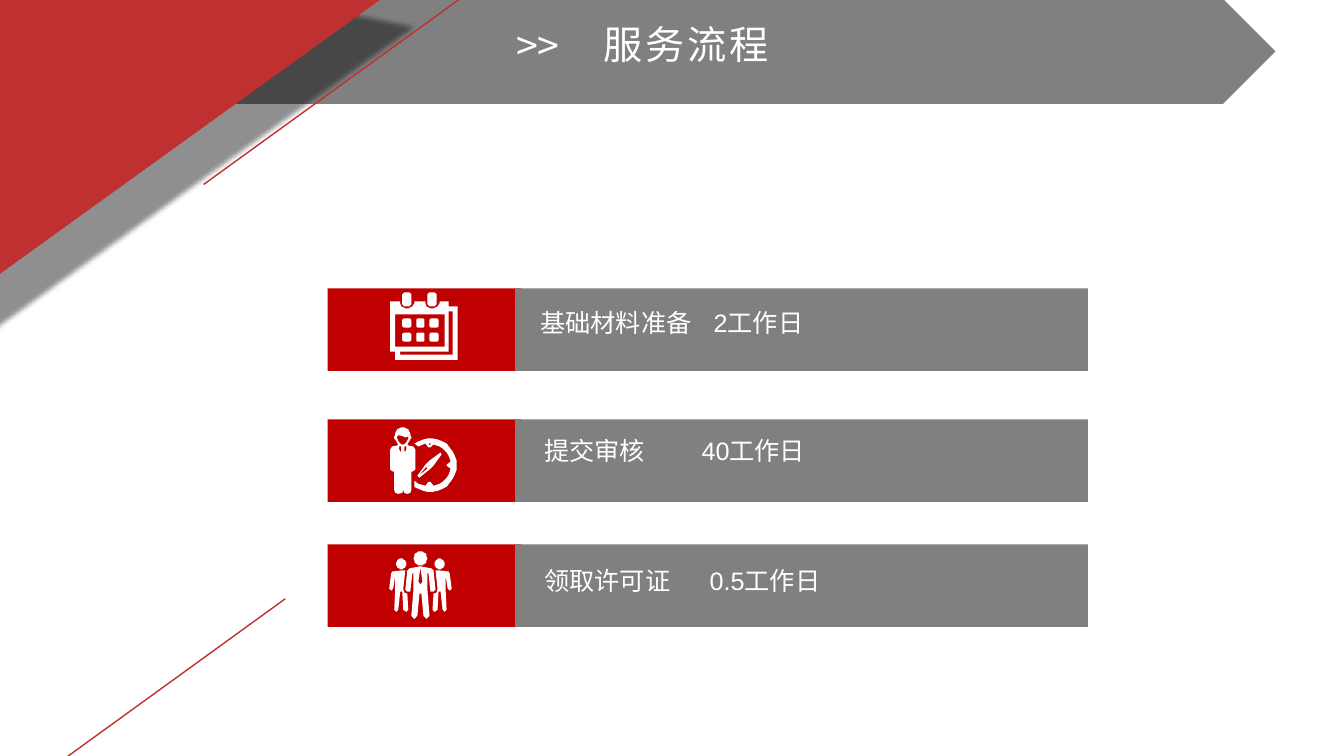
import math

import lxml.etree
import pptx
import pptx.dml.color
import pptx.enum.shapes
import pptx.enum.text
import pptx.oxml
import pptx.oxml.ns
import pptx.util

Inches = pptx.util.Inches
qn = pptx.oxml.ns.qn
SHAPES = pptx.enum.shapes.MSO_SHAPE
CJK_FONT = "Noto Sans CJK SC"
WHITE, GREY, RED, BRICK = "FFFFFF", "808080", "C00000", "BF3030"


def color(value):
    """Return the RGB colour for a hex string."""
    return pptx.dml.color.RGBColor.from_string(value)


def paint(shape, fill):
    """Give a shape a plain fill without outline or shadow."""
    shape.shadow.inherit = False
    shape.fill.solid()
    shape.fill.fore_color.rgb = color(fill)
    shape.line.fill.background()


def add_block(shapes, kind, left, top, width, height, fill):
    """Add a filled preset shape and return it."""
    sp = shapes.add_shape(kind, Inches(left), Inches(top), Inches(width), Inches(height))
    paint(sp, fill)
    return sp


def add_text(shapes, text, left, top, width, height, size, font, spacing=0, tab=0):
    """Add one line of white text, with optional letter spacing and tab stop."""
    sp = shapes.add_textbox(Inches(left), Inches(top), Inches(width), Inches(height))
    tf = sp.text_frame
    tf.word_wrap = True
    tf.auto_size = pptx.enum.text.MSO_AUTO_SIZE.SHAPE_TO_FIT_TEXT
    tf.text = text
    p = tf.paragraphs[0]
    if tab:
        tabs = lxml.etree.SubElement(p._p.get_or_add_pPr(), qn("a:tabLst"))
        lxml.etree.SubElement(tabs, qn("a:tab"), pos=str(Inches(tab)), algn="l")
    for r in p.runs:
        r.font.size = pptx.util.Pt(size)
        r.font.name = font
        r.font.color.rgb = color(WHITE)
        props = r._r.get_or_add_rPr()
        lxml.etree.SubElement(props, qn("a:ea"), typeface=CJK_FONT)
        if spacing:
            props.set("spc", str(spacing * 100))
    return p


def add_line(shapes, x1, y1, x2, y2):
    """Add a thin brick-red accent line."""
    line = shapes.add_connector(pptx.enum.shapes.MSO_CONNECTOR.STRAIGHT,
                                Inches(x1), Inches(y1), Inches(x2), Inches(y2))
    line.line.color.rgb = color(BRICK)
    line.line.width = pptx.util.Pt(1)
    lxml.etree.SubElement(line._element.spPr, qn("a:effectLst"))


def add_corner(shapes):
    """Add the tilted corner triangle with its soft shadow."""
    sp = add_block(shapes, SHAPES.ISOSCELES_TRIANGLE, -2.44, -1.18, 5.87, 3.17, BRICK)
    sp.rotation = 324.2
    effects = sp._element.spPr.find(qn("a:effectLst"))
    shadow = lxml.etree.SubElement(
        effects, qn("a:outerShdw"), blurRad=str(pptx.util.Pt(4)),
        dist=str(pptx.util.Pt(30)), dir="2700000", algn="tl", rotWithShape="0")
    black = lxml.etree.SubElement(shadow, qn("a:srgbClr"), val="000000")
    lxml.etree.SubElement(black, qn("a:alpha"), val="43000")


def arc(cx, cy, rx, ry, start, end, steps=24):
    """Return points along an elliptical arc, angles in degrees."""
    angles = [math.radians(start + (end - start) * i / steps) for i in range(steps + 1)]
    return [(cx + rx * math.cos(a), cy + ry * math.sin(a)) for a in angles]


def rounded(left, top, width, height, radius):
    """Return the outline of a rounded rectangle."""
    right, bottom = left + width - radius, top + height - radius
    corners = [(right, bottom), (left + radius, bottom),
               (left + radius, top + radius), (right, top + radius)]
    return [point for i, (x, y) in enumerate(corners)
            for point in arc(x, y, radius, radius, 90 * i, 90 * i + 90, 4)]


def mirror(points, width):
    """Reflect points from left to right within a width."""
    return [(width - x, y) for x, y in reversed(points)]


def calendar():
    """Return the calendar outlines in hundredths of an inch."""
    body = [(0, 9), (10, 9), (10, 11), (11, 14), (15, 16), (18, 16), (22, 14), (24, 11),
            (24, 9), (35, 9), (35, 11), (36, 14), (40, 16), (43, 16), (47, 14), (49, 11),
            (49, 9), (58, 9), (58, 14), (67, 14), (67, 67), (5, 67), (5, 59), (0, 59)]
    panel = [(5, 22), (54, 22), (54, 54), (5, 54)]
    back = [(58, 19), (58, 59), (10, 59), (10, 62), (62, 62), (62, 19)]
    days = [rounded(x, y, 9, 9, 2) for y in (26, 40) for x in (12, 25.5, 39)]
    rings = [rounded(x, 0, 9, 14, 4) for x in (12, 37)]
    return [body, panel, back] + days + rings


def inspector():
    """Return the outlines of a person beside a compass."""
    person = [(11, 0), (14, 0), (18, 2), (20, 6), (20, 8), (21, 9), (21, 11), (20, 12),
              (17, 17), (18, 18), (23, 19), (25, 22), (25, 42), (22, 44), (21, 44),
              (21, 62), (20, 65), (17, 66), (14, 65), (13, 62), (12, 65), (8, 66),
              (5, 65), (4, 62), (4, 44), (3, 44), (0, 42), (0, 22), (2, 19), (7, 18),
              (8, 17), (5, 12), (4, 11), (4, 9), (5, 8), (5, 6), (7, 2)]
    face = [(10, 8), (8, 8), (7, 9), (7, 11), (9, 15), (11, 17), (14, 17), (16, 15),
            (18, 11), (18, 10), (17, 9), (15, 10), (13, 9)]
    collar = [(9, 19), (9, 22), (10, 24), (11, 24), (11, 19)]
    dial = (arc(39.5, 37.5, 26.5, 26.5, -126, 126)
            + [(24, 53), (28, 56), (35, 58), (38, 54), (40, 54)]
            + arc(39.5, 37.5, 20.8, 20.8, 80, 10, 8) + [(56, 38), (56, 37)]
            + arc(39.5, 37.5, 20.8, 20.8, -10, -80, 8)
            + [(40, 20), (38, 20), (35, 16), (28, 19)])
    tick = [(38, 16), (39, 18), (41, 16)]
    needle = [(50, 25), (51, 27), (43, 38), (40, 41), (29, 50), (27, 48), (35, 37), (39, 33)]
    slot = [(36, 39), (28, 48), (37, 41)]
    pivot = [(38, 37), (38, 38), (40, 38)]
    return [person, face, collar, mirror(collar, 25), dial, tick, needle, slot, pivot]


def team():
    """Return the outlines of three standing people."""
    half = [(30, 15), (20, 17), (18, 19), (16, 38), (18, 40), (21, 40), (23, 22), (24, 21),
            (24, 39), (22, 64), (25, 67), (28, 64), (30, 42)]
    tie = [(31, 16), (29, 30), (31, 33), (33, 30)]
    side = [(16, 19), (12, 19), (3, 20), (2, 22), (0, 37), (2, 39), (4, 37), (6, 24),
            (6, 38), (5, 58), (7, 60), (9, 58), (11, 40), (13, 40), (14, 58), (17, 60),
            (19, 58), (18, 42), (15, 41), (14, 37)]
    side_head = arc(12, 12.5, 5, 5.5, 0, 360)
    head = arc(31, 7, 6.5, 7, 0, 360)
    return [half + mirror(half, 62), tie, head, side, mirror(side, 62),
            side_head, mirror(side_head, 62)]


def add_icon(shapes, outlines, left, top):
    """Draw outlines as one white freeform."""
    pen = shapes.build_freeform(*outlines[0][0], scale=Inches(0.01))
    for i, points in enumerate(outlines):
        if i:
            pen.move_to(*points[0])
        pen.add_line_segments(points[1:], close=True)
    paint(pen.convert_to_shape(Inches(left), Inches(top)), WHITE)


def add_step(s, top, icon, icon_at, text, text_at, tab):
    """Add one grouped step: red tile, grey bar, icon and wording."""
    shapes = s.shapes.add_group_shape().shapes
    add_block(shapes, SHAPES.RECTANGLE, 3.25, top, 1.92, 0.82, RED)
    add_block(shapes, SHAPES.RECTANGLE, 5.11, top, 5.68, 0.82, GREY)
    add_icon(shapes, icon, *icon_at)
    add_text(shapes, text, *text_at, 5.4, 0.4, 18, "Arial", tab=tab)


def main():
    """Build the service process slide."""
    prs = pptx.Presentation()
    prs.slide_width, prs.slide_height = Inches(13.33), Inches(7.5)
    s = prs.slides.add_slide(prs.slide_layouts[6])
    add_block(s.shapes, SHAPES.PENTAGON, 0.87, -0.01, 11.78, 1.04, GREY)
    p = add_text(s.shapes, "服务流程", 5.89, 0.15, 3.42, 0.57, 28, CJK_FONT, spacing=2)
    p.alignment = pptx.enum.text.PP_ALIGN.JUSTIFY
    add_text(s.shapes, ">>", 5.02, 0.16, 0.77, 0.57, 28, CJK_FONT)
    add_line(s.shapes, -0.11, 8.07, 2.83, 5.94)
    add_corner(s.shapes)
    add_line(s.shapes, 2.02, 1.83, 4.96, -0.3)
    steps = [
        (2.86, calendar(), (3.87, 2.9), "基础材料准备\t2工作日", (5.26, 3), 1.72),
        (4.16, inspector(), (3.87, 4.24), "提交审核\t40工作日", (5.3, 4.27), 1.56),
        (5.4, team(), (3.86, 5.47), "领取许可证\t0.5工作日", (5.3, 5.56), 1.64),
    ]
    for step in steps:
        add_step(s, *step)
    prs.save("out.pptx")


if __name__ == "__main__":
    main()
